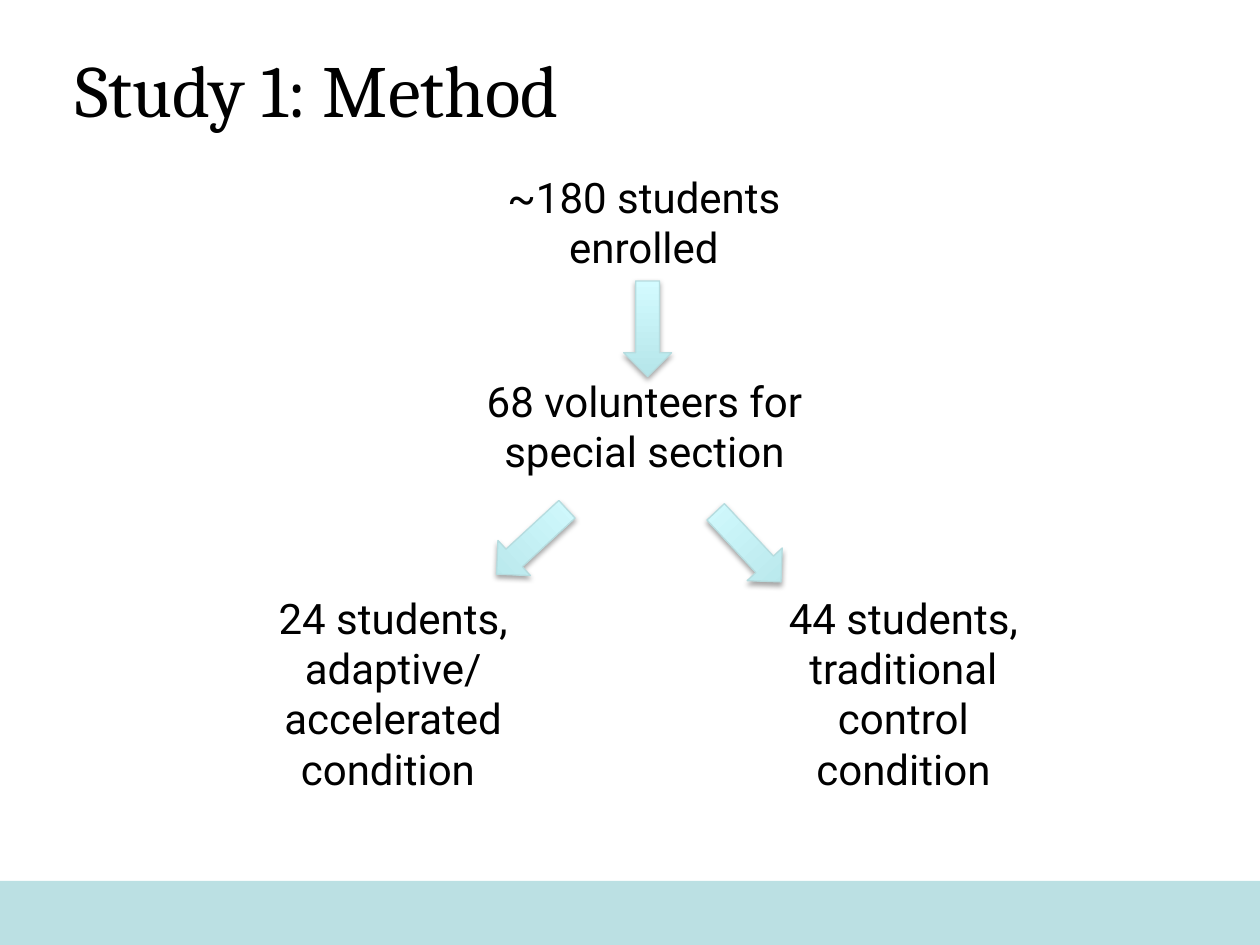
from lxml import etree
from pptx import Presentation
from pptx.dml.color import RGBColor
from pptx.enum.shapes import MSO_SHAPE as Shape
from pptx.enum.text import MSO_ANCHOR as Anchor, MSO_AUTO_SIZE as AutoSize, PP_ALIGN as Align
from pptx.oxml.ns import qn
from pptx.util import Inches, Pt

COLORS = {
    "text": "000000",
    "band": "BBE0E3",
    "arrow_dark": "B5E5E9",
    "arrow_light": "D3FBFF",
    "arrow_line": "B6DCDF",
    "shadow": "000000",
}
TITLE_FONT, BODY_FONT = "Cambria", "Roboto"

# Left, top, width, height in inches, then the paragraphs
STEPS = [
    ((3.87, 1.31, 2.48, 0.91), ["~180 students", "enrolled"]),
    ((3.7, 2.93, 2.83, 0.91), ["68 volunteers for special section"]),
    ((5.93, 4.65, 2.48, 1.72), ["44 students,", "traditional control condition"]),
    ((1.88, 4.65, 2.48, 1.72), ["24 students,", "adaptive/ accelerated condition "]),
]
ARROW_SIZE = (0.38, 0.76)
# Left, top in inches, then rotation in degrees
ARROWS = [(4.95, 2.23, 0), (4.03, 3.92, 47.3), (5.75, 3.96, 317)]


def rgb(name):
    return RGBColor.from_string(COLORS[name])


def place(shape, box):
    shape.left, shape.top, shape.width, shape.height = map(Inches, box)


def add_span(para, text, font, size):
    span = para.add_run()
    span.text = text
    span.font.name = font
    span.font.size = Pt(size)
    span.font.color.rgb = rgb("text")


def set_title(page, box, text):
    title = page.shapes.title
    place(title, box)
    frame = title.text_frame
    frame.vertical_anchor = Anchor.TOP
    frame.auto_size = AutoSize.NONE
    para = frame.paragraphs[0]
    para.alignment = Align.LEFT
    add_span(para, text, TITLE_FONT, 42)


def add_band(page, box):
    band = page.shapes.add_shape(Shape.RECTANGLE, *map(Inches, box))
    band.shadow.inherit = False
    band.fill.solid()
    band.fill.fore_color.rgb = rgb("band")
    band.line.fill.background()


def add_step(page, box, lines):
    frame = page.shapes.add_textbox(*map(Inches, box)).text_frame
    frame.word_wrap = True
    frame.auto_size = AutoSize.SHAPE_TO_FIT_TEXT
    for index, line in enumerate(lines):
        para = frame.add_paragraph() if index else frame.paragraphs[0]
        para.alignment = Align.CENTER
        add_span(para, line, BODY_FONT, 24)


def add_soft_shadow(shape):
    shape.shadow.inherit = False
    effects = shape.element.spPr.find(qn("a:effectLst"))
    shadow = etree.SubElement(
        effects, qn("a:outerShdw"), blurRad=str(Pt(3.1)), dist=str(Pt(1.8)),
        dir="5400000", rotWithShape="0")
    color = etree.SubElement(shadow, qn("a:srgbClr"), val=COLORS["shadow"])
    etree.SubElement(color, qn("a:alpha"), val="35000")


def add_arrow(page, box, rotation):
    arrow = page.shapes.add_shape(Shape.DOWN_ARROW, *map(Inches, box))
    arrow.rotation = rotation
    arrow.fill.gradient()
    arrow.fill.gradient_angle = 90
    for stop, position, name in zip(
            arrow.fill.gradient_stops, (0, 1), ("arrow_dark", "arrow_light")):
        stop.position = position
        stop.color.rgb = rgb(name)
    arrow.line.color.rgb = rgb("arrow_line")
    arrow.line.width = Pt(0.75)
    add_soft_shadow(arrow)


def build_method_slide(deck):
    page = deck.slides.add_slide(deck.slide_layouts.get_by_name("Title Only"))
    add_band(page, (0, 6.99, 10, 0.51))
    set_title(page, (0.5, 0.3, 9, 1.25), "Study 1: Method")
    for box, lines in STEPS:
        add_step(page, box, lines)
    for left, top, rotation in ARROWS:
        add_arrow(page, (left, top, *ARROW_SIZE), rotation)


def main():
    deck = Presentation()
    deck.slide_width, deck.slide_height = Inches(10), Inches(7.5)
    build_method_slide(deck)
    deck.save("out.pptx")


if __name__ == "__main__":
    main()
